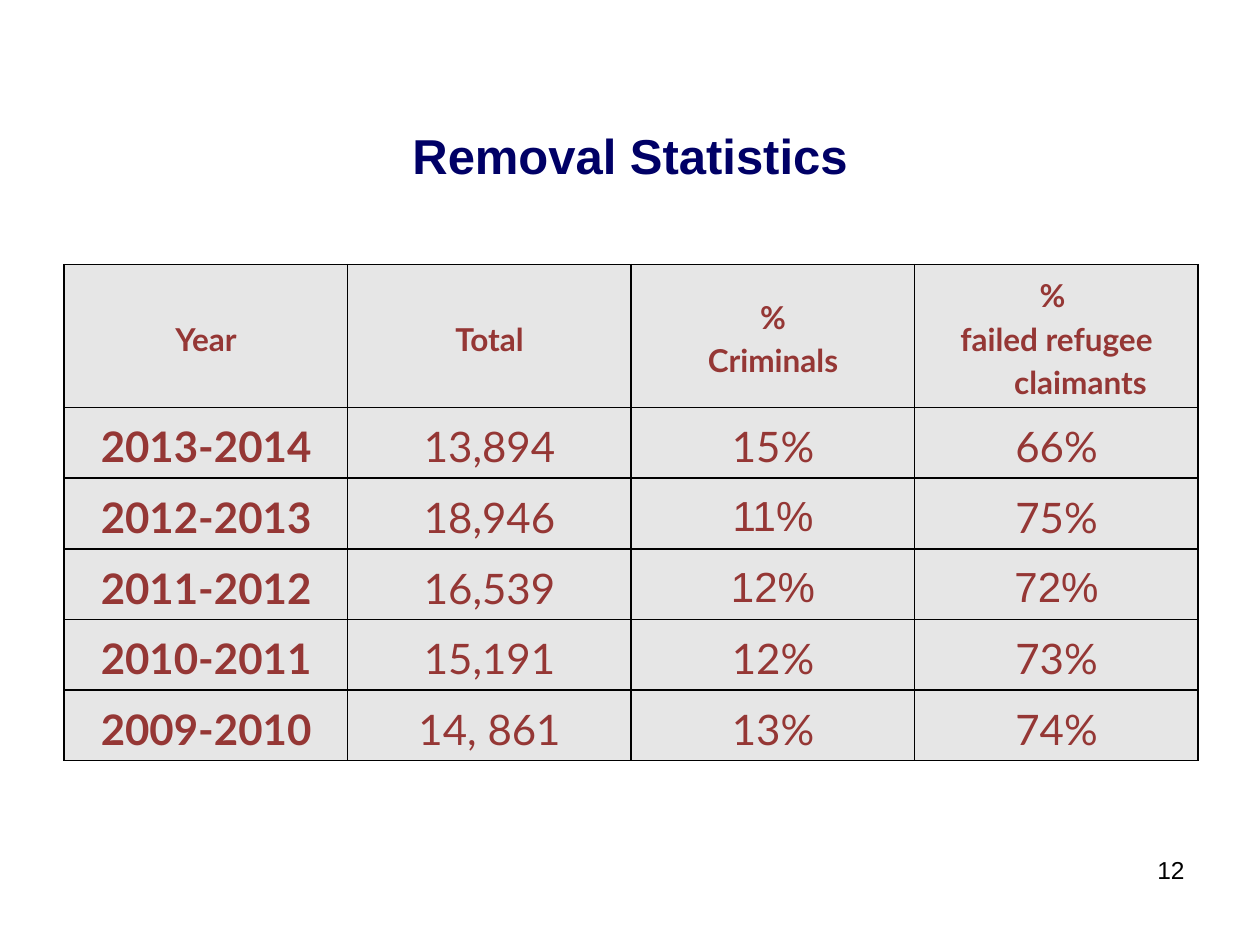
from lxml import etree
from pptx import Presentation, util as u
from pptx.dml.color import RGBColor
from pptx.enum import text
from pptx.oxml.ns import qn

WIDE, HIGH = 10, 7.5
INK = {"title": "000066", "cell": "953735", "fill": "E6E6E6",
       "line": "000000", "page": "000000"}
HEAD = ["Year", "Total", "%\nCriminals", "% \nfailed refugee claimants"]
DATA = [
    ["2013-2014", "13,894", "15%", "66%"],
    ["2012-2013", "18,946", "11%", "75%"],
    ["2011-2012", "16,539", "12%", "72%"],
    ["2010-2011", "15,191", "12%", "73%"],
    ["2009-2010", "14, 861", "13%", "74%"],
]
ARIAL = {(2, 2), (3, 2), (3, 3)}  # row and column of cells set in Arial
HEAD_H, ROW_H = 1.13, 0.56
HANG = u.Inches(0.38)


def inches(box):
    return [u.Inches(n) for n in box]


def style(para, size, ink, align, face="Arial", bold=False):
    para.alignment = align
    font = para.font
    font.name, font.size, font.bold = face, u.Pt(size), bold
    font.color.rgb = RGBColor.from_string(INK[ink])


def rule(cell):
    """Draw a thin line on all four sides; call before filling the cell."""
    props = cell._tc.get_or_add_tcPr()
    for side in ("lnL", "lnR", "lnT", "lnB"):
        line = etree.SubElement(props, qn("a:" + side), w=str(u.Pt(1)))
        fill = etree.SubElement(line, qn("a:solidFill"))
        etree.SubElement(fill, qn("a:srgbClr"), val=INK["line"])


def add_title(slide, box):
    title = slide.shapes.title
    title.left, title.top, title.width, title.height = inches(box)
    frame = title.text_frame
    frame.text = "Removal Statistics"
    frame.vertical_anchor = text.MSO_ANCHOR.MIDDLE
    style(frame.paragraphs[0], 28, "title", text.PP_ALIGN.CENTER, bold=True)


def fill_cell(cell, words, size, face, bold):
    rule(cell)
    cell.fill.solid()
    cell.fill.fore_color.rgb = RGBColor.from_string(INK["fill"])
    cell.vertical_anchor = text.MSO_ANCHOR.MIDDLE
    cell.text = words
    for para in cell.text_frame.paragraphs:
        props = para._p.get_or_add_pPr()
        props.set("marL", str(HANG))
        props.set("indent", str(-HANG))
        para.line_spacing = 1.15
        style(para, size, "cell", text.PP_ALIGN.CENTER, face, bold)


def add_stats(slide, box):
    rows = [HEAD] + DATA
    table = slide.shapes.add_table(len(rows), len(HEAD), *inches(box)).table
    for col in table.columns:
        col.width = u.Inches(box[2] / len(HEAD))
    for r, row in enumerate(rows):
        table.rows[r].height = u.Inches(ROW_H if r else HEAD_H)
        for c, words in enumerate(row):
            face = "Arial" if (r, c) in ARIAL else "Lato"
            fill_cell(table.cell(r, c), words, 24 if r else 18, face,
                      bold=r == 0 or c == 0)


def add_page(slide, box):
    frame = slide.shapes.add_textbox(*inches(box)).text_frame
    frame.word_wrap = True
    frame.text = "12"
    style(frame.paragraphs[0], 14, "page", text.PP_ALIGN.RIGHT)


def main():
    deck = Presentation()
    deck.slide_width, deck.slide_height = inches((WIDE, HIGH))
    slide = deck.slides.add_slide(deck.slide_layouts[5])
    edge = WIDE * 0.05
    span = WIDE - 2 * edge
    add_title(slide, (edge, 0.91, span, 0.64))
    add_stats(slide, (edge + 0.01, HIGH * 0.28, span,
                      HEAD_H + ROW_H * len(DATA)))
    add_page(slide, (WIDE - edge - 2.33, 6.74, 2.33, 0.52))
    deck.save("out.pptx")


if __name__ == "__main__":
    main()
